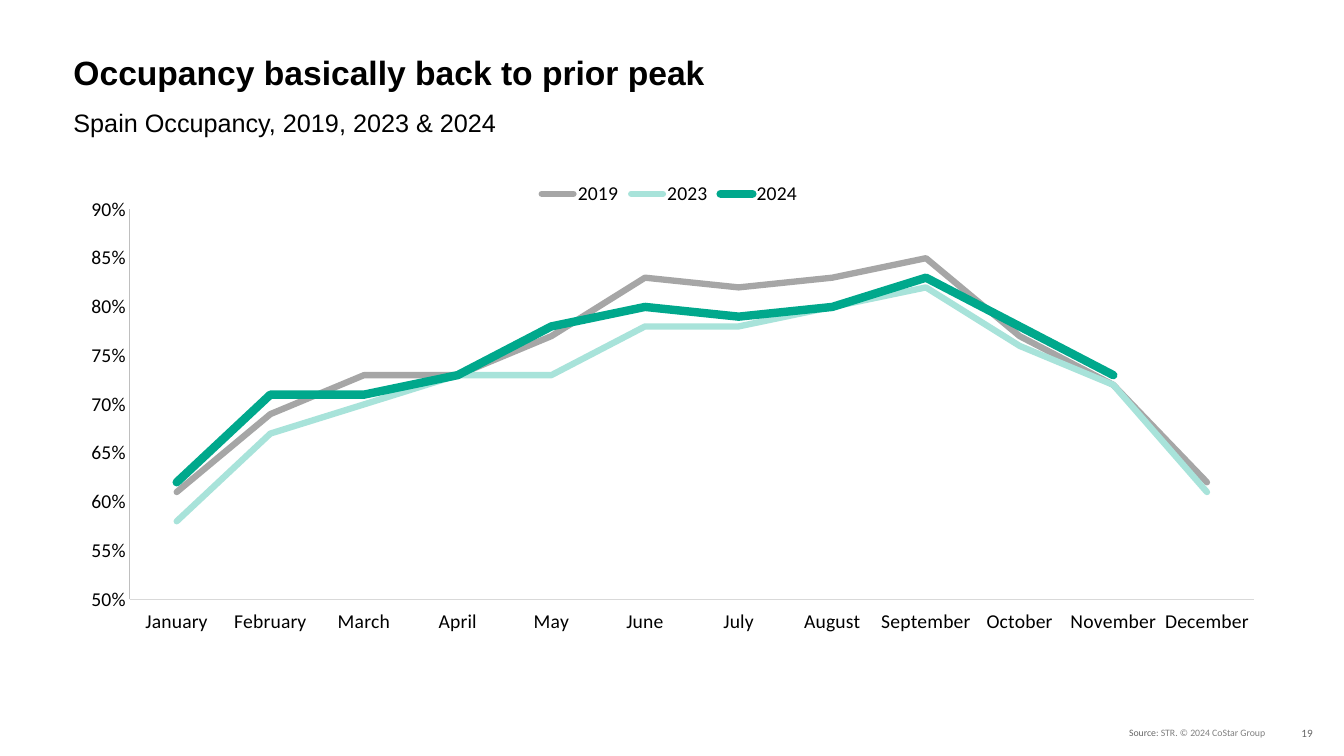
from lxml.etree import SubElement
from pptx import Presentation
from pptx.chart.data import CategoryChartData
from pptx.dml.color import RGBColor
from pptx.enum.chart import XL_CHART_TYPE, XL_LEGEND_POSITION, XL_TICK_LABEL_POSITION, XL_TICK_MARK
from pptx.enum.text import MSO_ANCHOR
from pptx.oxml.ns import qn
from pptx.util import Inches, Pt

MONTHS = ["January", "February", "March", "April", "May", "June", "July",
          "August", "September", "October", "November", "December"]
OCCUPANCY = [
    ("2019", "A6A6A6", 4.5, [0.61, 0.69, 0.73, 0.73, 0.77, 0.83, 0.82, 0.83, 0.85, 0.77, 0.72, 0.62]),
    ("2023", "A8E3DA", 4.5, [0.58, 0.67, 0.70, 0.73, 0.73, 0.78, 0.78, 0.80, 0.82, 0.76, 0.72, 0.61]),
    ("2024", "00A88C", 6, [0.62, 0.71, 0.71, 0.73, 0.78, 0.80, 0.79, 0.80, 0.83, 0.78, 0.73, None]),
]
PLOT_AREA = {"x": 0.054, "y": 0.076, "w": 0.929, "h": 0.757}


def rgb(color):
    """Turn a hex string into a colour."""
    return RGBColor.from_string(color)


def style_font(font, name, size, color, bold=False):
    """Set the face, size, colour and weight of a font."""
    font.name, font.size, font.bold = name, Pt(size), bold
    font.color.rgb = rgb(color)


def add_text(s, box, text, name, size, color, bold=False, anchor=MSO_ANCHOR.TOP):
    """Add a one-paragraph text box and return its paragraph."""
    tf = s.shapes.add_textbox(*map(Inches, box)).text_frame
    tf.word_wrap = True
    tf.vertical_anchor = anchor
    p = tf.paragraphs[0]
    p.add_run().text = text
    style_font(p.font, name, size, color, bold)
    return p


def add_heading(s, left, top, width):
    """Place the title and the subtitle below it."""
    add_text(s, (left, top, width, 0.38), "Occupancy basically back to prior peak",
             "Arial", 24, "000000", True, MSO_ANCHOR.MIDDLE)
    p = add_text(s, (left, top + 0.42, width, 0.34), "Spain Occupancy, 2019, 2023 & 2024",
                 "Arial", 18, "000000")
    p.line_spacing = Pt(26.7)


def set_plot_area(chart):
    """Fix the inner plot area as fractions of the chart."""
    plot_area = chart.plots[0]._element.getparent()
    layout = plot_area.find(qn("c:layout"))
    if layout is None:
        layout = SubElement(plot_area, qn("c:layout"))
        plot_area.insert(0, layout)
    manual = SubElement(layout, qn("c:manualLayout"))
    settings = {"layoutTarget": "inner", "xMode": "edge", "yMode": "edge", **PLOT_AREA}
    for tag, value in settings.items():
        SubElement(manual, qn(f"c:{tag}")).set("val", str(value))


def style_axis(axis, line_color):
    """Give an axis a thin line, black labels and no ticks or grid."""
    axis.has_major_gridlines = False
    axis.major_tick_mark = axis.minor_tick_mark = XL_TICK_MARK.NONE
    axis.format.line.color.rgb = rgb(line_color)
    axis.format.line.width = Pt(0.75)
    style_font(axis.tick_labels.font, "Calibri", 14, "000000")


def add_occupancy_chart(s, box):
    """Draw monthly occupancy as one line per year."""
    data = CategoryChartData(number_format="0%")
    data.categories = MONTHS
    for year, _, _, values in OCCUPANCY:
        data.add_series(year, values)
    chart = s.shapes.add_chart(XL_CHART_TYPE.LINE, *map(Inches, box), data).chart
    style_font(chart.font, "Calibri", 14, "000000")
    chart.has_title = False
    chart.has_legend = True
    chart.legend.position = XL_LEGEND_POSITION.TOP
    chart.legend.include_in_layout = False
    style_font(chart.legend.font, "Calibri", 14, "000000")
    plot = chart.plots[0]
    plot.vary_by_categories = False
    for series, (_, color, width, _) in zip(plot.series, OCCUPANCY):
        series.smooth = False
        line = series.format.line
        line.color.rgb = rgb(color)
        line.width = Pt(width)
        series._element.find(qn("c:spPr")).find(qn("a:ln")).set("cap", "rnd")
    style_axis(chart.category_axis, "D9D9D9")
    chart.category_axis.tick_label_position = XL_TICK_LABEL_POSITION.LOW
    axis = chart.value_axis
    style_axis(axis, "BFBFBF")
    axis.minimum_scale, axis.maximum_scale, axis.major_unit = 0.5, 0.9, 0.05
    axis.tick_labels.number_format = "0%"
    axis.tick_labels.number_format_is_linked = False
    set_plot_area(chart)


def add_footer(s, left, top):
    """Place the source line and the page number."""
    p = add_text(s, (left, top, 1.63, 0.22), "Source", "Calibri", 7, "666666")
    r = p.add_run()
    r.text = ": STR. © 2024 CoStar Group"
    r.font.color.rgb = rgb("808080")
    add_text(s, (left + 1.71, top + 0.01, 0.43, 0.2), "19", "Calibri", 8, "666666",
             anchor=MSO_ANCHOR.MIDDLE)


def main():
    """Build and save the slide."""
    prs = Presentation()
    prs.slide_width, prs.slide_height = Inches(13.33), Inches(7.5)
    s = prs.slides.add_slide(prs.slide_layouts[6])
    add_footer(s, 11.1, 7.16)
    add_occupancy_chart(s, (0.64, 1.69, 12, 5.11))
    add_heading(s, 0.63, 0.52, 12.01)
    prs.save("out.pptx")


if __name__ == "__main__":
    main()
